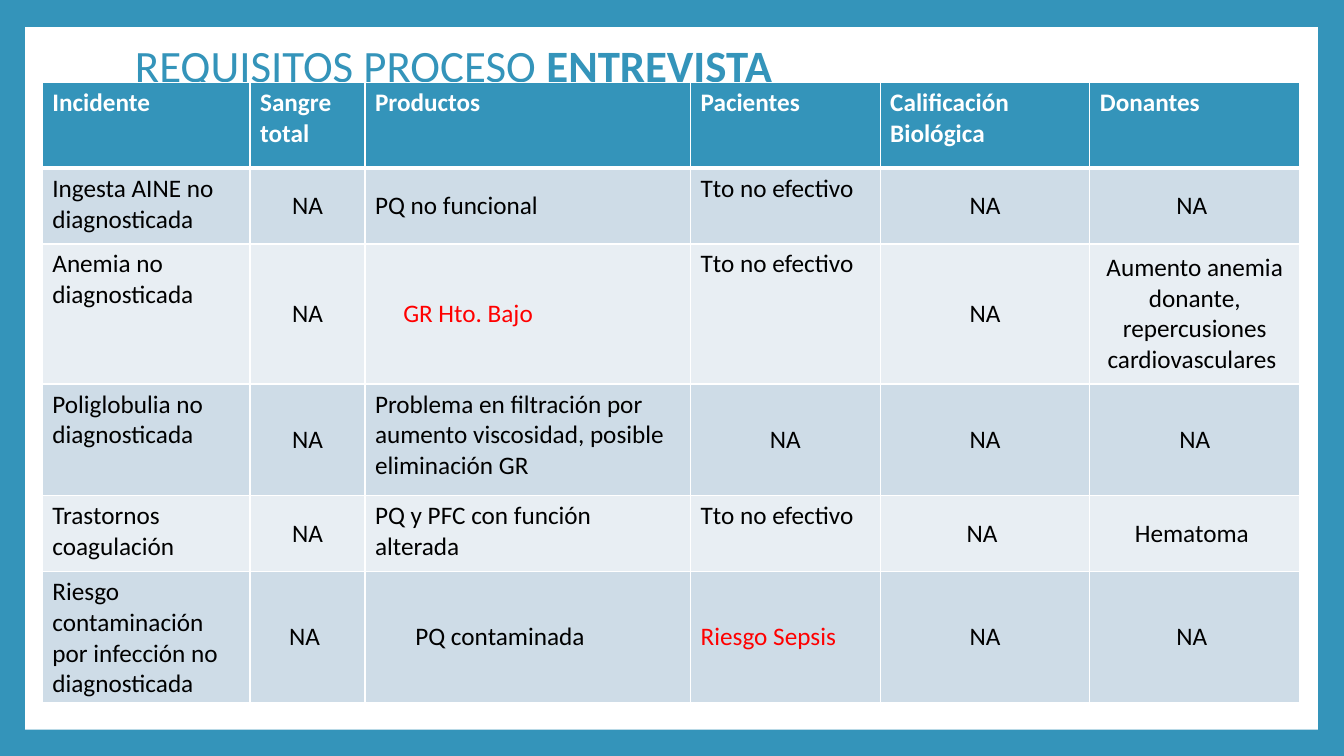
import pptx
import pptx.util
import pptx.dml.color
import pptx.enum.shapes
import pptx.enum.text
import pptx.oxml.ns
import lxml.etree

# Content
TITLE = [("REQUISITOS PROCESO ", False), ("ENTREVISTA", True)]
HEADER = ["Incidente", "Sangre total", "Productos", "Pacientes",
          "Calificación Biológica", "Donantes"]
INCIDENTS = [
    ["Ingesta AINE no diagnosticada", "NA", "PQ no funcional",
     "Tto no efectivo", "NA", "NA "],
    ["Anemia no diagnosticada", "NA", "GR Hto. Bajo", "Tto no efectivo", "NA",
     "Aumento anemia donante, repercusiones cardiovasculares "],
    ["Poliglobulia no diagnosticada", "NA",
     "Problema en filtración por aumento viscosidad, posible eliminación GR",
     "NA", "NA", "NA"],
    ["Trastornos coagulación", "NA", "PQ y PFC con función alterada",
     "Tto no efectivo", "NA ", "Hematoma "],
    ["Riesgo contaminación por infección no diagnosticada", "NA ",
     "PQ contaminada", "Riesgo Sepsis", "NA", "NA "],
]
CENTRED_COLUMNS = {1, 4, 5}
MIDDLE_LEFT = {"PQ no funcional", "GR Hto. Bajo", "PQ contaminada", "Riesgo Sepsis"}
ALERTS = {"GR Hto. Bajo", "Riesgo Sepsis"}
INDENTS = {"GR Hto. Bajo": 0.28, "PQ contaminada": 0.4}

# Layout in inches
WIDTH, HEIGHT = 13.33, 7.5
PANEL = (0.25, 0.27, 12.82, 6.97)
TITLE_BOX = (1.24, 0.3, 10.81, 0.74)
TABLE_LEFT, TABLE_TOP = 0.42, 0.82
COLUMNS = [2.06, 1.14, 3.23, 1.88, 2.08, 2.08]
ROWS = [0.85, 0.75, 1.39, 1.11, 0.75, 1.29]
CELL_MARGIN = 0.1

# Style
FONT = "Calibri"
ACCENT, WHITE, BLACK, RED = "3494BA", "FFFFFF", "000000", "FF0000"
BANDS = ["CEDCE7", "E8EEF3"]
THIN, THICK = 1, 3

inches = pptx.util.Inches
ALIGN = pptx.enum.text.PP_ALIGN
ANCHOR = pptx.enum.text.MSO_ANCHOR


def paint(color_format, value):
    color_format.rgb = pptx.dml.color.RGBColor.from_string(value)


def fill(target, value):
    target.fill.solid()
    paint(target.fill.fore_color, value)


def set_font(font, size, color, bold):
    font.name, font.size, font.bold = FONT, pptx.util.Pt(size), bold
    paint(font.color, color)


def set_borders(cell, widths):
    properties = cell._tc.get_or_add_tcPr()
    for side, points in widths.items():
        line = lxml.etree.SubElement(properties, pptx.oxml.ns.qn("a:ln" + side),
                                     w=str(pptx.util.Pt(points)))
        solid = lxml.etree.SubElement(line, pptx.oxml.ns.qn("a:solidFill"))
        lxml.etree.SubElement(solid, pptx.oxml.ns.qn("a:srgbClr"), val=WHITE)


def fill_cell(cell, text, row, column):
    header = row == 0
    set_borders(cell, {"L": THIN, "R": THIN,
                       "T": THICK if row == 1 else THIN,
                       "B": THICK if header else THIN})
    fill(cell, ACCENT if header else BANDS[(row - 1) % 2])
    cell.margin_left = inches(CELL_MARGIN + INDENTS.get(text, 0))
    cell.text = text
    paragraph = cell.text_frame.paragraphs[0]
    centred = not header and (column in CENTRED_COLUMNS or text == "NA")
    paragraph.alignment = ALIGN.CENTER if centred else ALIGN.LEFT
    middle = centred or text in MIDDLE_LEFT
    cell.vertical_anchor = ANCHOR.MIDDLE if middle else ANCHOR.TOP
    color = WHITE if header else RED if text in ALERTS else BLACK
    set_font(paragraph.font, 18, color, header)


def main():
    presentation = pptx.Presentation()
    presentation.slide_width, presentation.slide_height = inches(WIDTH), inches(HEIGHT)
    slide = presentation.slides.add_slide(presentation.slide_layouts[6])

    # Frame and white panel
    fill(slide.background, ACCENT)
    panel = slide.shapes.add_shape(pptx.enum.shapes.MSO_SHAPE.RECTANGLE,
                                   *map(inches, PANEL))
    panel.shadow.inherit = False
    fill(panel, WHITE)
    panel.line.fill.background()

    # Title
    frame = slide.shapes.add_textbox(*map(inches, TITLE_BOX)).text_frame
    frame.word_wrap = True
    frame.vertical_anchor = ANCHOR.MIDDLE
    paragraph = frame.paragraphs[0]
    paragraph.line_spacing = 0.9
    for text, bold in TITLE:
        run = paragraph.add_run()
        run.text = text
        set_font(run.font, 32, ACCENT, bold)

    # Table of incidents
    table = slide.shapes.add_table(
        len(ROWS), len(COLUMNS), inches(TABLE_LEFT), inches(TABLE_TOP),
        inches(sum(COLUMNS)), inches(sum(ROWS))).table
    for column, width in zip(table.columns, COLUMNS):
        column.width = inches(width)
    for row, height in zip(table.rows, ROWS):
        row.height = inches(height)
    for row, texts in enumerate([HEADER] + INCIDENTS):
        for column, text in enumerate(texts):
            fill_cell(table.cell(row, column), text, row, column)

    presentation.save("out.pptx")


if __name__ == "__main__":
    main()
